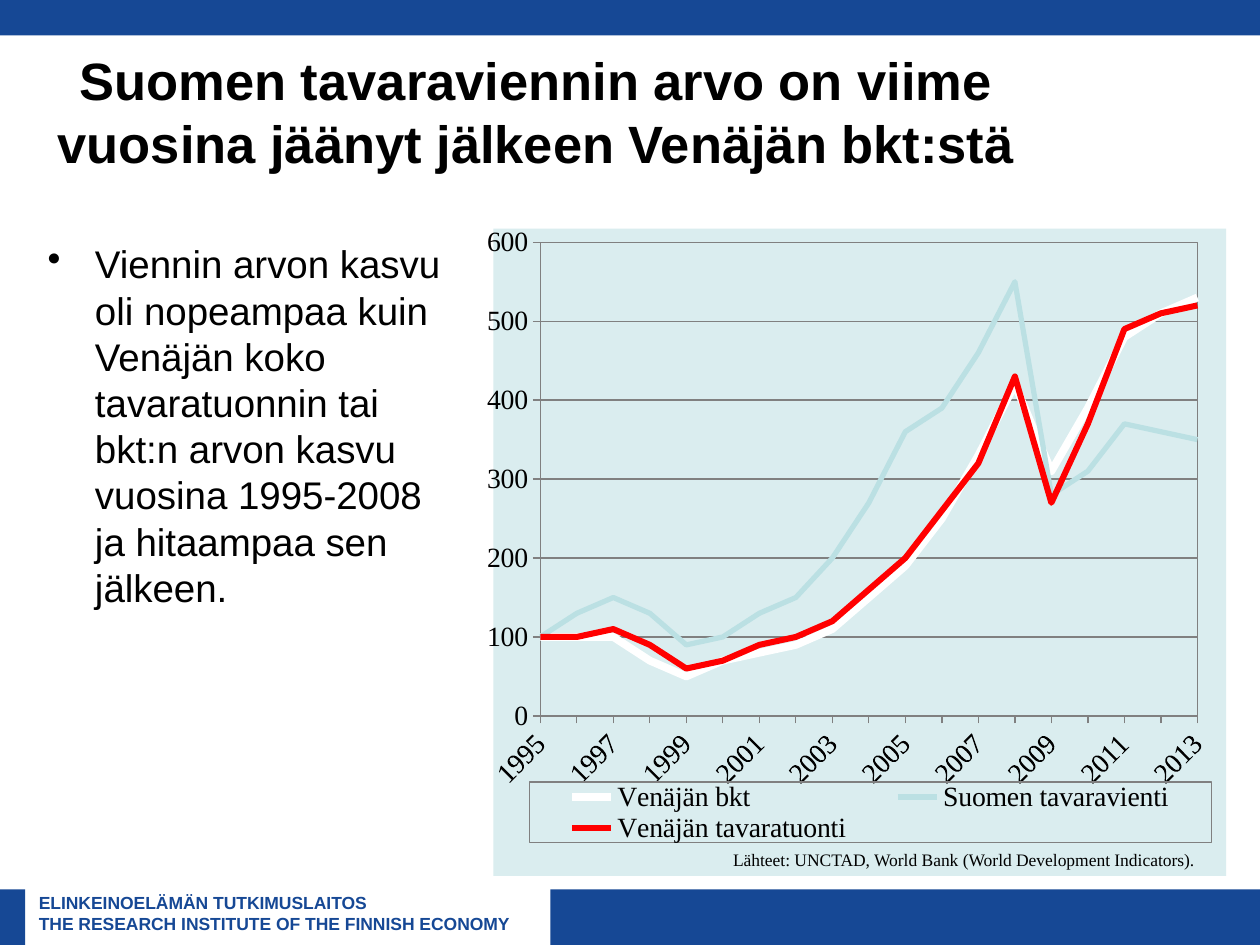
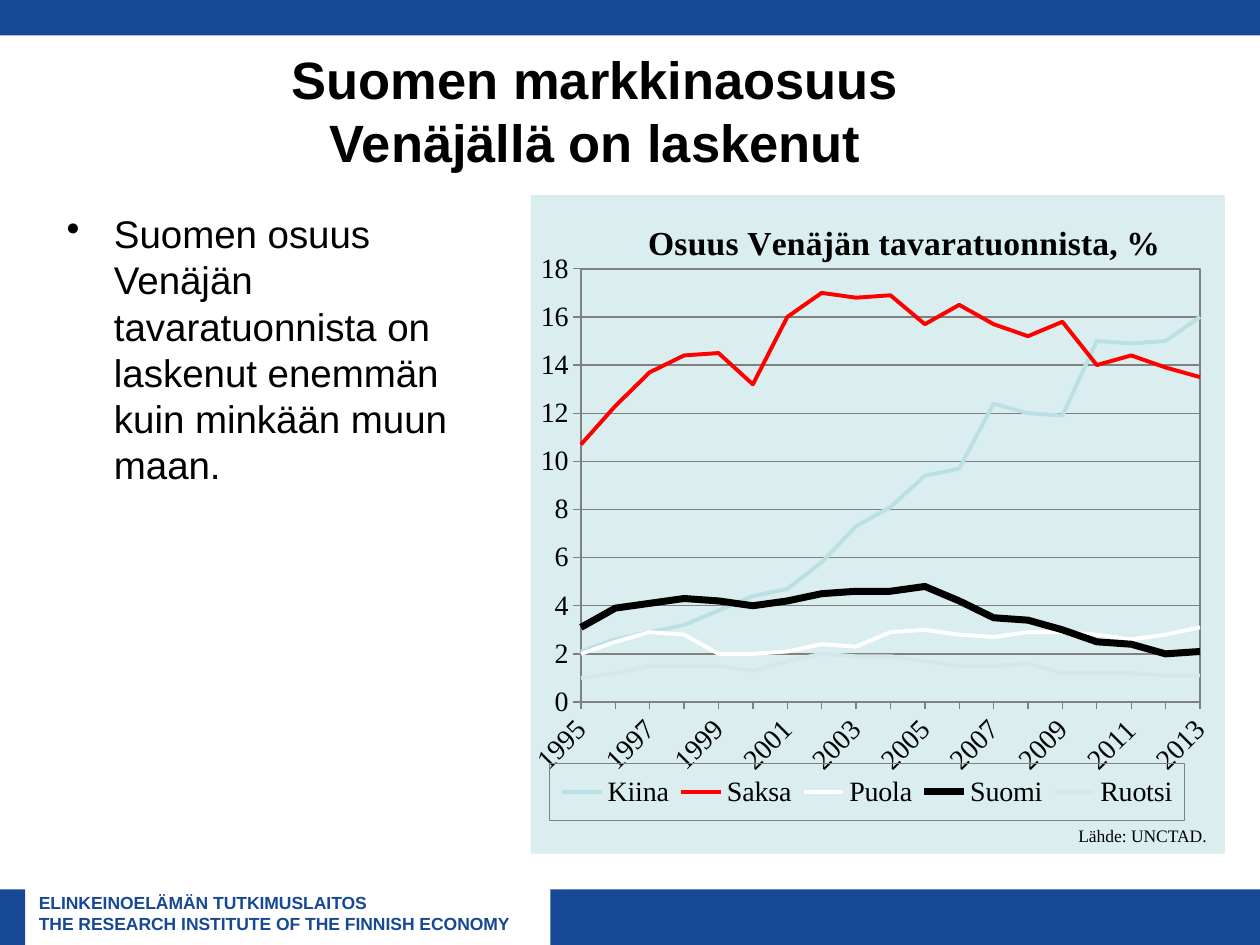
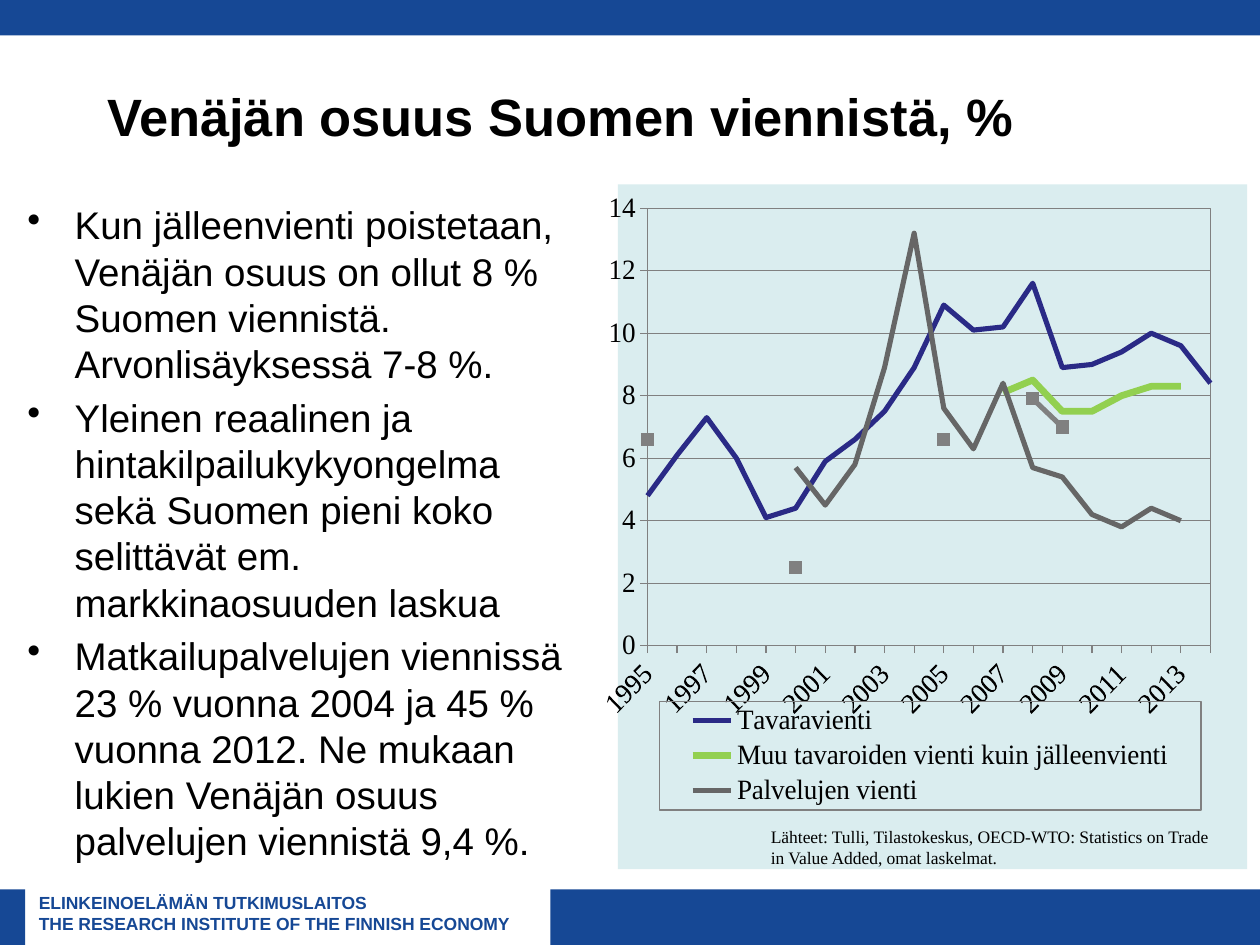
from lxml import etree
from pptx import Presentation, util as u
from pptx.chart import data as chart_data
from pptx.dml.color import RGBColor
from pptx.enum import chart as charts, shapes, text
from pptx.oxml import parse_xml
from pptx.oxml.ns import nsdecls, qn

BLUE = RGBColor(0x16, 0x48, 0x95)
BLACK = RGBColor(0, 0, 0)
WHITE = RGBColor(0xFF, 0xFF, 0xFF)
GREY = RGBColor(0x80, 0x80, 0x80)
DARK_GREY = RGBColor(0x66, 0x66, 0x66)
RED = RGBColor(0xFF, 0, 0)
AQUA = RGBColor(0xBB, 0xE0, 0xE3)
PALE_AQUA = RGBColor(0xDA, 0xED, 0xEF)
MIST = RGBColor(0xD4, 0xE8, 0xEB)
NAVY = RGBColor(0x2A, 0x2A, 0x86)
GREEN = RGBColor(0x92, 0xD0, 0x50)

SANS, SERIF = "Arial", "Times New Roman"
INDENT = u.Pt(27)


def place(bounds):
    return [u.Pt(length) for length in bounds]


def write(para, words, size, font=SANS, color=BLACK, bold=False):
    span = para.add_run()
    span.text = words
    span.font.size = u.Pt(size)
    span.font.name = font
    span.font.bold = bold
    span.font.color.rgb = color


def manual_layout(bounds, inner=False):
    """Chart layout in fractions of the chart: left, top and optionally width, height."""
    target = '<c:layoutTarget val="inner"/>' if inner else ""
    keys = ("x", "y", "w", "h")[:len(bounds)]
    modes = "".join(f'<c:{key}Mode val="edge"/>' for key in keys[:2])
    sizes = "".join(f'<c:{key} val="{value}"/>' for key, value in zip(keys, bounds))
    return parse_xml(f'<c:layout {nsdecls("c")}><c:manualLayout>{target}{modes}{sizes}'
                     "</c:manualLayout></c:layout>")


def set_layout(parent, layout, after=None):
    for old in parent.findall(qn("c:layout")):
        parent.remove(old)
    before = parent.find(qn(after)) if after else None
    parent.insert(0 if before is None else parent.index(before) + 1, layout)


def chart_area_format(fill=None, line=None):
    """Shape properties for chart parts that have no format object."""
    paint = f'<a:solidFill><a:srgbClr val="{fill}"/></a:solidFill>' if fill else "<a:noFill/>"
    stroke = (f'<a:ln w="{u.Pt(0.75)}"><a:solidFill><a:srgbClr val="{line}"/></a:solidFill></a:ln>'
              if line else "<a:ln><a:noFill/></a:ln>")
    return parse_xml(f'<c:spPr {nsdecls("c", "a")}>{paint}{stroke}</c:spPr>')


class Report:
    def __init__(self):
        self.deck = Presentation()
        self.deck.slide_width, self.deck.slide_height = u.Pt(720), u.Pt(540)
        self.page = None

    def new_page(self):
        self.page = self.deck.slides.add_slide(self.deck.slide_layouts[6])
        for bounds in ((314.6, 508.3, 405.4, 31.7), (0, 0, 720, 20.3), (0, 508.3, 14.4, 31.7)):
            self.band(bounds)
        self.text_box((15.1, 506.2, 300.2, 31),
                      ["ELINKEINOELÄMÄN TUTKIMUSLAITOS",
                       "THE RESEARCH INSTITUTE OF THE FINNISH ECONOMY"],
                      size=10, color=BLUE, bold=True)

    def band(self, bounds):
        box = self.page.shapes.add_shape(shapes.MSO_SHAPE.RECTANGLE, *place(bounds))
        box.shadow.inherit = False
        box.fill.solid()
        box.fill.fore_color.rgb = BLUE
        box.line.fill.background()

    def text_box(self, bounds, lines, wrap=True, **style):
        frame = self.page.shapes.add_textbox(*place(bounds)).text_frame
        frame.word_wrap = wrap
        for number, words in enumerate(lines):
            para = frame.add_paragraph() if number else frame.paragraphs[0]
            write(para, words, **style)
        return frame

    def title(self, bounds, words):
        frame = self.text_box(bounds, [words], size=30, bold=True)
        frame.vertical_anchor = text.MSO_ANCHOR.MIDDLE
        frame.paragraphs[0].alignment = text.PP_ALIGN.CENTER

    def bullets(self, bounds, lines):
        frame = self.text_box(bounds, lines, size=22)
        for number, para in enumerate(frame.paragraphs):
            properties = para._p.get_or_add_pPr()
            properties.set("marL", str(INDENT))
            properties.set("indent", str(-INDENT))
            etree.SubElement(properties, qn("a:buChar")).set("char", "•")
            if number:
                para.space_before = u.Pt(4.4)

    def source(self, bounds, words, wrap=True):
        self.text_box(bounds, [words], wrap=wrap, size=10, font=SERIF)

    def line_chart(self, bounds, last_year, top, step, series, plot_at, legend_at, heading=None):
        """Each series is (name, colour, line width, values)."""
        data = chart_data.CategoryChartData()
        data.categories = [str(year) for year in range(1995, last_year + 1)]
        for name, _, _, values in series:
            data.add_series(name, values)
        chart = self.page.shapes.add_chart(
            charts.XL_CHART_TYPE.LINE, *place(bounds), data).chart
        chart.font.size, chart.font.name = u.Pt(16), SERIF
        chart.font.color.rgb = BLACK
        chart.plots[0].vary_by_categories = False

        # Lines
        for item, (_, color, width, _) in zip(chart.plots[0].series, series):
            item.smooth = False
            item.format.line.color.rgb = color
            item.format.line.width = u.Pt(width)
            item.marker.style = charts.XL_MARKER_STYLE.NONE

        # Axes
        years, values = chart.category_axis, chart.value_axis
        values.minimum_scale, values.maximum_scale, values.major_unit = 0, top, step
        values.has_major_gridlines = True
        values.major_gridlines.format.line.color.rgb = GREY
        values.major_gridlines.format.line.width = u.Pt(0.75)
        for axis in (years, values):
            axis.major_tick_mark = charts.XL_TICK_MARK.OUTSIDE
            axis.minor_tick_mark = charts.XL_TICK_MARK.NONE
            axis.format.line.color.rgb = GREY
            axis.format.line.width = u.Pt(0.75)
        values._element.find(qn("c:crosses")).addnext(
            parse_xml(f'<c:crossBetween {nsdecls("c")} val="midCat"/>'))
        years.tick_labels.font.size = u.Pt(16)
        years._element.find(qn("c:txPr")).find(qn("a:bodyPr")).set("rot", "-2700000")
        no_multi = years._element.find(qn("c:noMultiLvlLbl"))
        for tag, interval in (("tickLblSkip", 2), ("tickMarkSkip", 1)):
            no_multi.addprevious(parse_xml(f'<c:{tag} {nsdecls("c")} val="{interval}"/>'))

        # Heading
        chart.has_title = heading is not None
        if heading:
            write(chart.chart_title.text_frame.paragraphs[0], heading, 19.2, SERIF, bold=True)
            set_layout(chart.chart_title._element, manual_layout((0.16, 0.03)), "c:tx")

        # Legend, plot area and background
        chart.has_legend = True
        chart.legend.position = charts.XL_LEGEND_POSITION.BOTTOM
        chart.legend.include_in_layout = False
        chart.legend.font.size = u.Pt(16)
        legend = chart.legend._element
        set_layout(legend, manual_layout(legend_at), "c:legendPos")
        legend.find(qn("c:overlay")).addnext(chart_area_format(line=GREY))
        area = chart._chartSpace.chart.plotArea
        set_layout(area, manual_layout(plot_at, inner=True))
        area.append(chart_area_format(line=GREY))
        chart._chartSpace.chart.addnext(chart_area_format(fill=PALE_AQUA))
        return chart


def export_value_page(report):
    report.new_page()
    report.title((20.2, 20.9, 572.4, 85),
                 "Suomen tavaraviennin arvo on viime vuosina jäänyt jälkeen Venäjän bkt:stä")
    report.bullets((20.2, 133.9, 249.1, 357.1), [
        "Viennin arvon kasvu oli nopeampaa kuin Venäjän koko tavaratuonnin tai bkt:n arvon "
        "kasvu vuosina 1995-2008 ja hitaampaa sen jälkeen."])
    report.line_chart(
        (278.3, 129.5, 422.3, 371), 2013, 600, 100,
        [("Venäjän bkt", WHITE, 4.5,
          [100, 100, 100, 70, 50, 70, 80, 90, 110, 150, 190, 250, 330, 420, 310, 390, 480, 510,
           530]),
         ("Suomen tavaravienti", AQUA, 3,
          [100, 130, 150, 130, 90, 100, 130, 150, 200, 270, 360, 390, 460, 550, 280, 310, 370,
           360, 350]),
         ("Venäjän tavaratuonti", RED, 3.5,
          [100, 100, 110, 90, 60, 70, 90, 100, 120, 160, 200, 260, 320, 430, 270, 370, 490, 510,
           520])],
        plot_at=(0.064, 0.021, 0.897, 0.732), legend_at=(0.049, 0.854, 0.931, 0.094))
    report.source((411.8, 481.7, 282.2, 19.4),
                  "Lähteet: UNCTAD, World Bank (World Development Indicators).", wrap=False)


def market_share_page(report):
    report.new_page()
    report.title((93.6, 26.6, 493.2, 72.7), "Suomen markkinaosuus Venäjällä on laskenut")
    report.bullets((31, 116.6, 260.6, 334.8), [
        "Suomen osuus Venäjän tavaratuonnista on laskenut enemmän kuin minkään muun maan."])
    report.line_chart(
        (303.3, 111.5, 396.7, 376.3), 2013, 18, 2,
        [("Kiina", AQUA, 2.25,
          [2.1, 2.6, 2.9, 3.2, 3.8, 4.4, 4.7, 5.8, 7.3, 8.1, 9.4, 9.7, 12.4, 12, 11.9, 15, 14.9,
           15, 16]),
         ("Saksa", RED, 2.25,
          [10.7, 12.3, 13.7, 14.4, 14.5, 13.2, 16, 17, 16.8, 16.9, 15.7, 16.5, 15.7, 15.2, 15.8,
           14, 14.4, 13.9, 13.5]),
         ("Puola", WHITE, 2.25,
          [2, 2.5, 2.9, 2.8, 2, 2, 2.1, 2.4, 2.3, 2.9, 3, 2.8, 2.7, 2.9, 2.9, 2.8, 2.6, 2.8, 3.1]),
         ("Suomi", BLACK, 4,
          [3.1, 3.9, 4.1, 4.3, 4.2, 4, 4.2, 4.5, 4.6, 4.6, 4.8, 4.2, 3.5, 3.4, 3, 2.5, 2.4, 2,
           2.1]),
         ("Ruotsi", MIST, 2.25,
          [1, 1.2, 1.5, 1.5, 1.5, 1.3, 1.7, 2, 1.9, 1.9, 1.7, 1.5, 1.5, 1.6, 1.2, 1.2, 1.2, 1.1,
           1.1])],
        plot_at=(0.072, 0.112, 0.892, 0.658), legend_at=(0.027, 0.863, 0.915, 0.087),
        heading="Osuus Venäjän tavaratuonnista, %")
    report.source((609.1, 468, 90.7, 19.4), "Lähde: UNCTAD.")


def russia_share_page(report):
    report.new_page()
    report.title((42.5, 37.4, 555.8, 56.9), "Venäjän osuus Suomen viennistä, %")
    report.bullets((8.6, 111.6, 323.3, 391), [
        "Kun jälleenvienti poistetaan, Venäjän osuus on ollut 8 % Suomen viennistä. "
        "Arvonlisäyksessä 7-8 %.",
        "Yleinen reaalinen ja hintakilpailukykyongelma sekä Suomen pieni koko selittävät em. "
        "markkinaosuuden laskua",
        "Matkailupalvelujen viennissä 23 % vuonna 2004 ja 45 % vuonna 2012. Ne mukaan lukien "
        "Venäjän osuus palvelujen viennistä 9,4 %."])
    gap = [None]
    chart = report.line_chart(
        (342.2, 105.3, 370.4, 391.3), 2014, 14, 2,
        [("Tavaravienti", NAVY, 3,
          [4.8, 6.1, 7.3, 6, 4.1, 4.4, 5.9, 6.6, 7.5, 8.9, 10.9, 10.1, 10.2, 11.6, 8.9, 9, 9.4, 10,
           9.6, 8.4]),
         ("Muu tavaroiden vienti kuin jälleenvienti", GREEN, 4,
          gap * 12 + [8.1, 8.5, 7.5, 7.5, 8, 8.3, 8.3] + gap),
         ("Palvelujen vienti", DARK_GREY, 3,
          gap * 5 + [5.7, 4.5, 5.8, 8.9, 13.2, 7.6, 6.3, 8.4, 5.7, 5.4, 4.2, 3.8, 4.4, 4] + gap),
         ("Arvonlisäyksen vienti", GREY, 3,
          [6.6] + gap * 4 + [2.5] + gap * 4 + [6.6] + gap * 2 + [7.9, 7] + gap * 5)],
        plot_at=(0.047, 0.035, 0.895, 0.639), legend_at=(0.066, 0.755, 0.861, 0.159))

    # Value added shows as square markers and stays out of the legend
    marker = chart.plots[0].series[3].marker
    marker.style, marker.size = charts.XL_MARKER_STYLE.SQUARE, 7
    marker.format.fill.solid()
    marker.format.fill.fore_color.rgb = GREY
    marker.format.line.color.rgb = GREY
    chart.legend._element.find(qn("c:legendPos")).addnext(parse_xml(
        f'<c:legendEntry {nsdecls("c")}><c:idx val="3"/><c:delete val="1"/></c:legendEntry>'))
    report.source((433.4, 468.7, 272.2, 31.7),
                  "Lähteet: Tulli, Tilastokeskus, OECD-WTO: Statistics on Trade in Value Added, "
                  "omat laskelmat.")


def main():
    report = Report()
    export_value_page(report)
    market_share_page(report)
    russia_share_page(report)
    report.deck.save("out.pptx")


if __name__ == "__main__":
    main()
